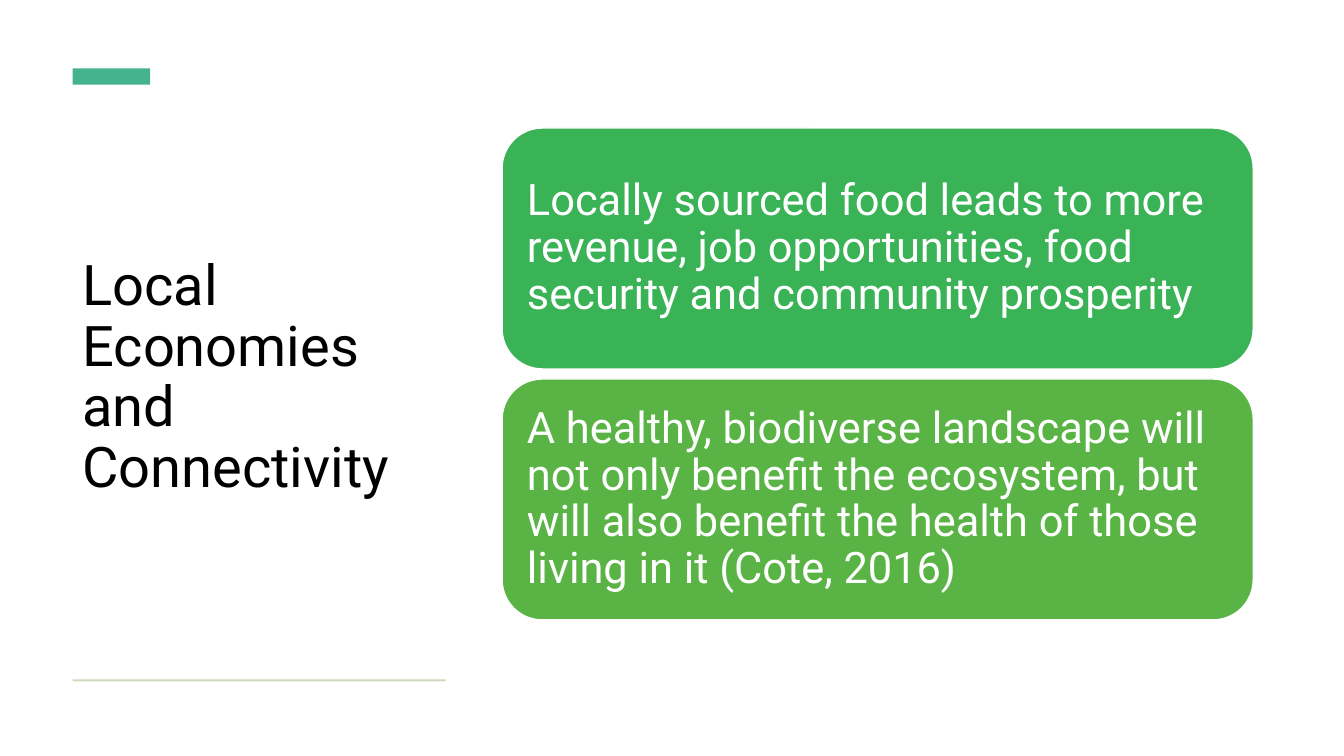
from dataclasses import dataclass
from pptx import Presentation, util as u
from pptx.dml.color import RGBColor
from pptx.enum import shapes, text

TITLE = "Local Economies and Connectivity"
CARDS = [
    ("Locally sourced food leads to more revenue, job opportunities, "
     "food security and community prosperity", "3AB256"),
    ("A healthy, biodiverse landscape will not only benefit the ecosystem, "
     "but will also benefit the health of those living in it (Cote, 2016)", "59B445"),
]


@dataclass(frozen=True)
class Theme:
    font: str = "Roboto"
    ink: str = "000000"
    paper: str = "FFFFFF"
    accent: str = "45B38D"
    rule: str = "CDD9BC"
    head: int = 40
    body: int = 31


THEME = Theme()
WIDE, HIGH = 13.33, 7.5
LEFT, SIDE = 0.72, 3.7
CARD = (4.98, 1.27, 7.45, 2.39)
GAP = 0.1


def block(slide, kind, box, fill, line=None):
    shape = slide.shapes.add_shape(kind, *map(u.Inches, box))
    shape.shadow.inherit = False
    shape.fill.solid()
    shape.fill.fore_color.rgb = RGBColor.from_string(fill)
    if line:
        shape.line.color.rgb = RGBColor.from_string(line)
        shape.line.width = u.Pt(1)
    else:
        shape.line.fill.background()
    return shape


def write(shape, words, size, color, pad):
    frame = shape.text_frame
    frame.word_wrap = True
    frame.vertical_anchor = text.MSO_ANCHOR.MIDDLE
    frame.margin_left = frame.margin_right = u.Inches(pad[0])
    frame.margin_top = frame.margin_bottom = u.Inches(pad[1])
    para = frame.paragraphs[0]
    para.alignment = text.PP_ALIGN.LEFT
    para.line_spacing = 0.9
    run = para.add_run()
    run.text = words
    run.font.name = THEME.font
    run.font.size = u.Pt(size)
    run.font.color.rgb = RGBColor.from_string(color)


def main():
    deck = Presentation()
    deck.slide_width, deck.slide_height = u.Inches(WIDE), u.Inches(HIGH)
    slide = deck.slides.add_slide(deck.slide_layouts[6])
    rect = shapes.MSO_SHAPE.RECTANGLE
    title = slide.shapes.add_textbox(*map(u.Inches, (LEFT, 1.05, SIDE, 5.41)))
    write(title, TITLE, THEME.head, THEME.ink, (0.1, 0.05))
    block(slide, rect, (LEFT, 0.68, 0.77, 0.16), THEME.accent)
    block(slide, rect, (LEFT, 6.74, SIDE, 0.02), THEME.rule)
    left, top, width, height = CARD
    for row, (words, fill) in enumerate(CARDS):
        box = (left, top + row * (height + GAP), width, height)
        card = block(slide, shapes.MSO_SHAPE.ROUNDED_RECTANGLE, box, fill, THEME.paper)
        write(card, words, THEME.body, THEME.paper, (0.13, 0.13))
    deck.save("out.pptx")


if __name__ == "__main__":
    main()
